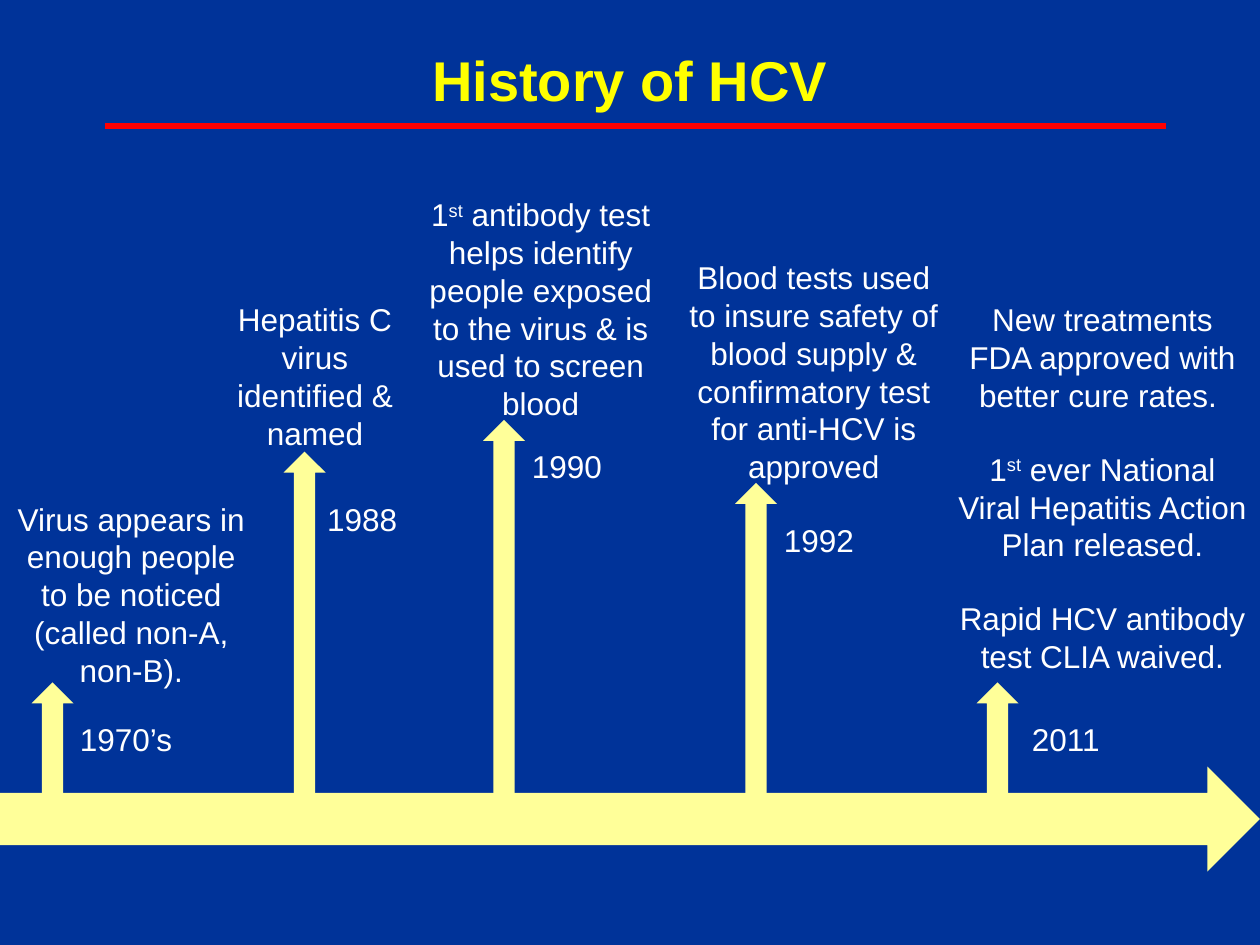
"""Builds a timeline slide on the history of HCV."""
from lxml.etree import SubElement
from pptx import Presentation
from pptx.dml.color import RGBColor
from pptx.enum.shapes import MSO_CONNECTOR, MSO_SHAPE
from pptx.enum.text import MSO_ANCHOR, MSO_AUTO_SIZE, PP_ALIGN
from pptx.oxml.ns import qn
from pptx.util import Inches, Pt

theme = {
    "back": RGBColor(0x00, 0x33, 0x99),
    "title": RGBColor(0xFF, 0xFF, 0x00),
    "text": RGBColor(0xFF, 0xFF, 0xFF),
    "arrow": RGBColor(0xFF, 0xFF, 0x99),
    "rule": RGBColor(0xFF, 0x00, 0x00),
    "face": "Arial",
    "head": Pt(32),
    "body": Pt(18),
    "gap": Pt(20.7),
    "line": Pt(3),
}

deck = Presentation()
deck.slide_width, deck.slide_height = Inches(10), Inches(7.5)
col, row = deck.slide_width / 120, deck.slide_height / 90
slide = deck.slides.add_slide(deck.slide_layouts[5])
slide.background.fill.solid()
slide.background.fill.fore_color.rgb = theme["back"]


def place(x, y, wide, high):
    """Turns grid columns and rows into slide lengths."""
    return round(x * col), round(y * row), round(wide * col), round(high * row)


def write(frame, text, size, tint, bold=False):
    """Fills a frame with centred lines; carets enclose superscripts."""
    frame.word_wrap = True
    style = {"name": theme["face"], "size": theme[size], "bold": bold}
    for num, line in enumerate(text.split("\n")):
        para = frame.add_paragraph() if num else frame.paragraphs[0]
        para.alignment = PP_ALIGN.CENTER
        para.space_before = theme["gap"] if num else Pt(0)
        for part, words in enumerate(line.split("^")):
            run = para.add_run()
            run.text = words
            for key, value in style.items():
                setattr(run.font, key, value)
            run.font.color.rgb = theme[tint]
            if part % 2:
                run.font._element.set("baseline", "30000")


title = slide.shapes.title
spots = zip(("left", "top", "width", "height"), place(0, 2, 120, 11))
for side, value in spots:
    setattr(title, side, value)
title.text_frame.vertical_anchor = MSO_ANCHOR.MIDDLE
write(title.text_frame, "History of HCV", "head", "title", True)

arrows = [
    (MSO_SHAPE.RIGHT_ARROW, (0, 73, 120, 10)),
    (MSO_SHAPE.UP_ARROW, (3, 65, 4, 11)),
    (MSO_SHAPE.UP_ARROW, (27, 43, 4, 34)),
    (MSO_SHAPE.UP_ARROW, (46, 40, 4, 36)),
    (MSO_SHAPE.UP_ARROW, (70, 46, 4, 30)),
    (MSO_SHAPE.UP_ARROW, (93, 65, 4, 11)),
]
for kind, spot in arrows:
    arrow = slide.shapes.add_shape(kind, *place(*spot))
    arrow.shadow.inherit = False
    arrow.fill.solid()
    arrow.fill.fore_color.rgb = theme["arrow"]
    arrow.line.fill.background()

notes = [
    ((5, 68, 14, 4.8), "1970’s"),
    ((29, 47, 11, 4.8), "1988"),
    ((48, 42, 12, 4.8), "1990"),
    ((72, 49, 12, 4.8), "1992"),
    ((95, 68, 13, 4.8), "2011"),
    ((0, 47, 25, 19.4),
     "Virus appears in enough people to be noticed (called non-A, non-B)."),
    ((21, 28, 18, 15.7), "Hepatitis C virus identified & named"),
    ((39, 18, 25, 23),
     "1^st^ antibody test helps identify people exposed to the virus "
     "& is used to screen blood"),
    ((64, 24, 27, 23),
     "Blood tests used to insure safety of blood supply & "
     "confirmatory test for anti-HCV is approved"),
    ((90, 28, 30, 37.6),
     "New treatments FDA approved with better cure rates. \n"
     "1^st^ ever National Viral Hepatitis Action Plan released.\n"
     "Rapid HCV antibody test CLIA waived."),
]
for spot, text in notes:
    frame = slide.shapes.add_textbox(*place(*spot)).text_frame
    write(frame, text, "body", "text")
    frame.auto_size = MSO_AUTO_SIZE.SHAPE_TO_FIT_TEXT

rule = slide.shapes.add_connector(MSO_CONNECTOR.STRAIGHT, *place(10, 12, 111, 12))
rule.line.color.rgb = theme["rule"]
rule.line.width = theme["line"]
SubElement(rule._element.spPr, qn("a:effectLst"))

deck.save("out.pptx")
